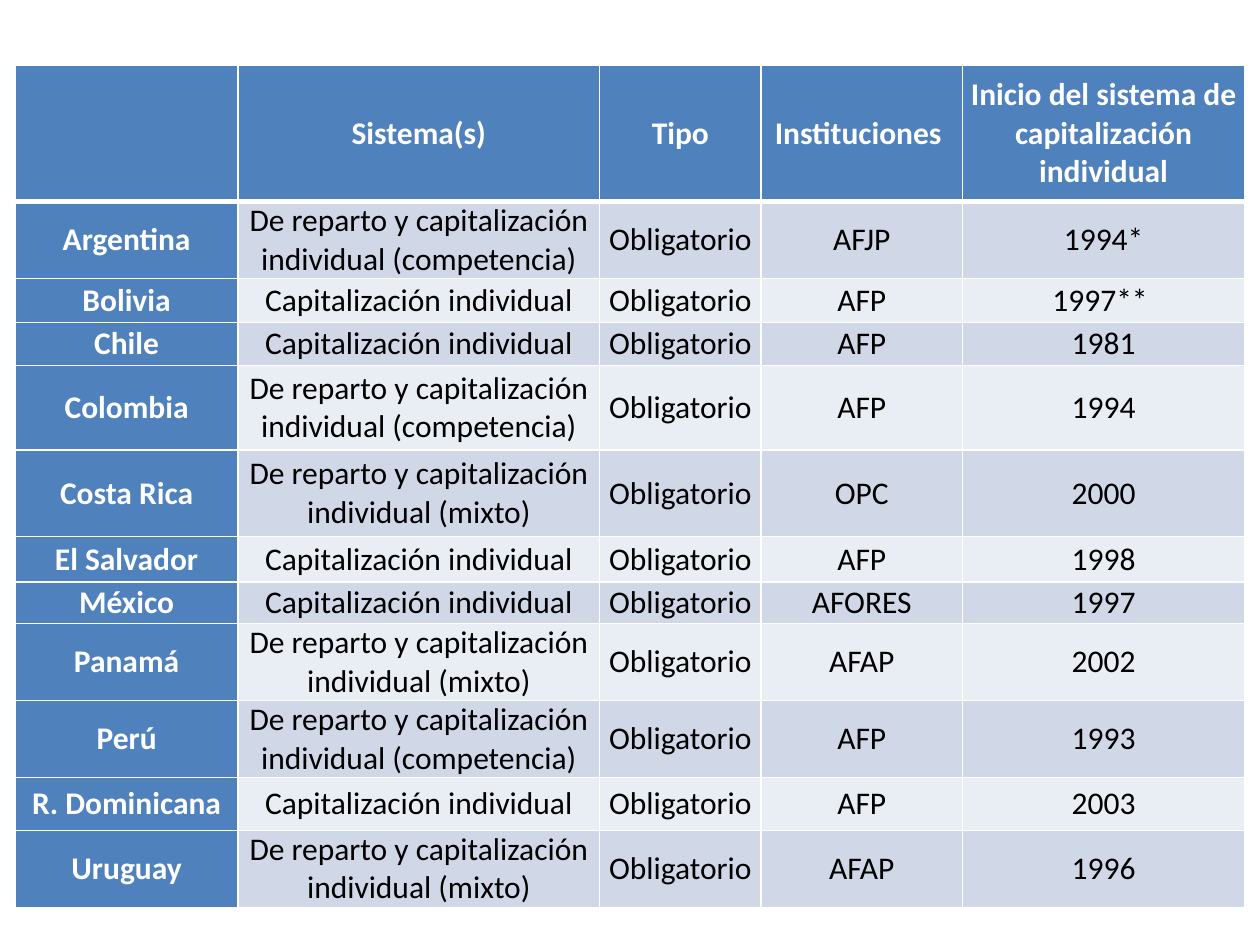
from lxml.etree import SubElement
from pptx import Presentation
from pptx.dml.color import RGBColor
from pptx.enum.text import MSO_ANCHOR, PP_ALIGN
from pptx.oxml.ns import qn
from pptx.util import Inches, Pt

WHITE, BLACK, BLUE = "FFFFFF", "000000", "4F81BD"
BANDS = ("D0D8E8", "E9EDF4")
COLUMN_WIDTHS = (1.77, 2.87, 1.28, 1.6, 2.24)
ROW_HEIGHTS = (1.08, 0.61, 0.35, 0.34, 0.67, 0.69, 0.36, 0.33, 0.61, 0.61, 0.42, 0.61)

INDIVIDUAL = "Capitalización individual"
COMPETITIVE = "De reparto y capitalización individual (competencia)"
MIXED = "De reparto y capitalización individual (mixto)"
HEADER = ("", "Sistema(s)", "Tipo", "Instituciones ",
          "Inicio del sistema de capitalización individual")
COUNTRIES = (
    ("Argentina", COMPETITIVE, "AFJP", "1994*"),
    ("Bolivia", INDIVIDUAL, "AFP", "1997** "),
    ("Chile", INDIVIDUAL, "AFP", "1981"),
    ("Colombia", COMPETITIVE, "AFP", "1994"),
    ("Costa Rica", MIXED, "OPC", "2000"),
    ("El Salvador", INDIVIDUAL, "AFP", "1998"),
    ("México", INDIVIDUAL, "AFORES", "1997"),
    ("Panamá", MIXED, "AFAP", "2002"),
    ("Perú", COMPETITIVE, "AFP", "1993"),
    ("R. Dominicana", INDIVIDUAL, "AFP", "2003"),
    ("Uruguay", MIXED, "AFAP", "1996"),
)


def color(hex_value):
    """Return the colour for a hex string."""
    return RGBColor.from_string(hex_value)


class SlideBuilder:
    """Hold the text style and the current slide."""

    def __init__(self, slide, font="Calibri", size=18):
        """Keep the slide and its type settings."""
        self.slide = slide
        self.font = font
        self.size = Pt(size)

    def borders(self, cell, top=1, bottom=1):
        """Draw white lines around a cell."""
        properties = cell._tc.get_or_add_tcPr()
        for side, width in (("L", 1), ("R", 1), ("T", top), ("B", bottom)):
            line = SubElement(properties, qn(f"a:ln{side}"), w=str(Pt(width)))
            fill = SubElement(line, qn("a:solidFill"))
            SubElement(fill, qn("a:srgbClr"), val=WHITE)

    def cell(self, cell, text, fill, text_color, bold):
        """Fill a cell and set its centred text."""
        cell.fill.solid()
        cell.fill.fore_color.rgb = color(fill)
        cell.vertical_anchor = MSO_ANCHOR.MIDDLE
        cell.margin_left = cell.margin_right = Inches(0.05)
        cell.margin_top = cell.margin_bottom = 0
        cell.text_frame.text = text
        paragraph = cell.text_frame.paragraphs[0]
        paragraph.alignment = PP_ALIGN.CENTER
        for run in paragraph.runs:
            run.font.name = self.font
            run.font.size = self.size
            run.font.bold = bold
            run.font.color.rgb = color(text_color)

    def table(self, left, top, widths, heights, rows):
        """Add a table with a header row, a header column and banded rows."""
        table = self.slide.shapes.add_table(
            len(rows), len(widths), Inches(left), Inches(top),
            Inches(sum(widths)), Inches(sum(heights))).table
        for column, width in zip(table.columns, widths):
            column.width = Inches(width)
        for row, height in zip(table.rows, heights):
            row.height = Inches(height)
        for r, texts in enumerate(rows):
            for c, text in enumerate(texts):
                cell = table.cell(r, c)
                heading = r == 0 or c == 0
                self.borders(cell, top=3 if r == 1 else 1, bottom=3 if r == 0 else 1)
                self.cell(cell, text,
                          BLUE if heading else BANDS[(r - 1) % 2],
                          WHITE if heading else BLACK, heading)


def main():
    """Build the slide of pension systems and save it."""
    presentation = Presentation()
    presentation.slide_width = Inches(10)
    presentation.slide_height = Inches(7.5)
    builder = SlideBuilder(presentation.slides.add_slide(presentation.slide_layouts[6]))
    rows = [HEADER] + [(country, system, "Obligatorio", institution, start)
                       for country, system, institution, start in COUNTRIES]
    builder.table(0.12, 0.52, COLUMN_WIDTHS, ROW_HEIGHTS, rows)
    presentation.save("out.pptx")


if __name__ == "__main__":
    main()
